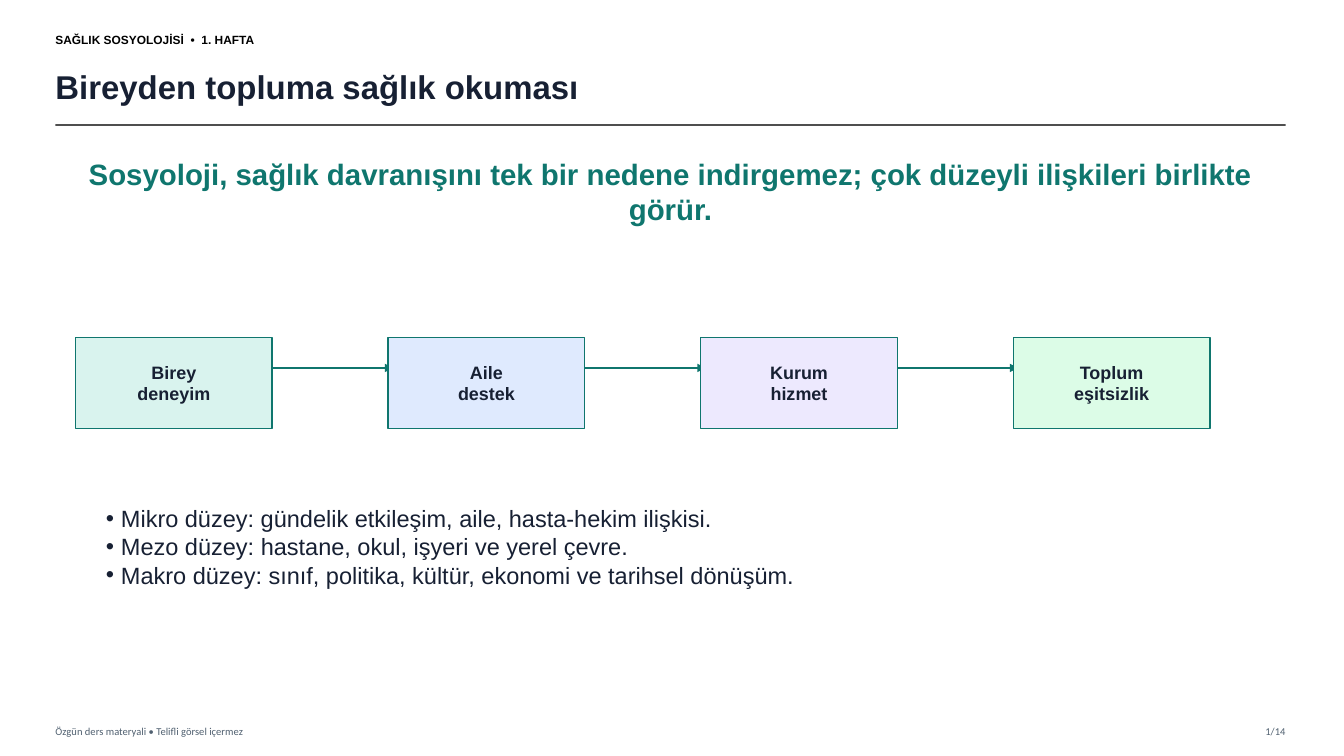
from dataclasses import dataclass
from typing import NamedTuple

from lxml import etree
from pptx import Presentation
from pptx.dml.color import RGBColor
from pptx.enum.shapes import MSO_CONNECTOR, MSO_SHAPE
from pptx.enum.text import MSO_ANCHOR, PP_ALIGN
from pptx.oxml.ns import qn
from pptx.util import Inches, Pt

LEFT, CENTER, RIGHT = PP_ALIGN.LEFT, PP_ALIGN.CENTER, PP_ALIGN.RIGHT
TOP, MIDDLE = MSO_ANCHOR.TOP, MSO_ANCHOR.MIDDLE
STRAIGHT, RECTANGLE = MSO_CONNECTOR.STRAIGHT, MSO_SHAPE.RECTANGLE


@dataclass(frozen=True)
class Theme:
    ink: str = "172033"
    accent: str = "0F766E"
    black: str = "000000"
    muted: str = "506070"
    rule: str = "333333"
    heading_font: str = "Arial"
    footer_font: str = "Calibri"
    kicker_size: float = 8.5
    title_size: float = 23.5
    message_size: float = 21
    stage_size: float = 12.8
    bullet_size: float = 16.8
    footer_size: float = 7.5


THEME = Theme()


class Style(NamedTuple):
    size: float
    color: str
    bold: bool = True
    font: str = THEME.heading_font
    align: PP_ALIGN = LEFT
    anchor: MSO_ANCHOR = MIDDLE


class Box(NamedTuple):
    left: float
    top: float
    width: float
    height: float


class Label(NamedTuple):
    box: Box
    lines: list[str]
    style: Style


class Stage(NamedTuple):
    lines: list[str]
    fill: str


KICKER = Style(THEME.kicker_size, THEME.black)
TITLE = Style(THEME.title_size, THEME.ink)
FOOTER = Style(THEME.footer_size, THEME.muted, False, THEME.footer_font)
MESSAGE = Style(THEME.message_size, THEME.accent, align=CENTER, anchor=TOP)
STAGE = Style(THEME.stage_size, THEME.ink, align=CENTER)
BULLETS = Style(THEME.bullet_size, THEME.ink, False, anchor=TOP)

LABELS = [
    Label(Box(0.55, 0.58, 11.95, 0.55), ["Bireyden topluma sağlık okuması"], TITLE),
    Label(Box(0.55, 7.14, 6, 0.22),
          ["Özgün ders materyali • Telifli görsel içermez"], FOOTER),
    Label(Box(12.1, 7.14, 0.65, 0.22), ["1/14"], FOOTER._replace(align=RIGHT)),
    Label(Box(0.8, 1.55, 11.7, 1.05),
          ["Sosyoloji, sağlık davranışını tek bir nedene indirgemez; "
           "çok düzeyli ilişkileri birlikte görür."], MESSAGE),
]
KICKER_PARTS = ["SAĞLIK SOSYOLOJİSİ", " ", "•", " ", "1. HAFTA"]
KICKER_SPACING = 236
STAGES = [
    Stage(["Birey", "deneyim"], "D9F3EE"),
    Stage(["Aile", "destek"], "DFEAFE"),
    Stage(["Kurum", "hizmet"], "EDE9FE"),
    Stage(["Toplum", "eşitsizlik"], "DCFCE7"),
]
FIRST_STAGE = Box(0.75, 3.35, 1.95, 0.9)
STAGE_PITCH = 3.1
ARROW_OFFSET, ARROW_LENGTH, ARROW_TOP = 1.8, 1.35, 3.65
LEVELS = [
    "Mikro düzey: gündelik etkileşim, aile, hasta-hekim ilişkisi.",
    "Mezo düzey: hastane, okul, işyeri ve yerel çevre.",
    "Makro düzey: sınıf, politika, kültür, ekonomi ve tarihsel dönüşüm.",
]
BULLET_INDENT = Inches(0.15)


def rgb(color: str) -> RGBColor:
    return RGBColor.from_string(color)


def style_run(r, style: Style) -> None:
    r.font.name = style.font
    r.font.size = Pt(style.size)
    r.font.bold = style.bold
    r.font.color.rgb = rgb(style.color)


def fill_text(sp, lines: list[str], style: Style) -> None:
    tf = sp.text_frame
    tf.text = "\n".join(lines)
    tf.word_wrap = True
    tf.vertical_anchor = style.anchor
    tf.margin_left = tf.margin_right = tf.margin_top = tf.margin_bottom = 0
    for p in tf.paragraphs:
        p.alignment = style.align
        for r in p.runs:
            style_run(r, style)


def add_label(s, label: Label):
    sp = s.shapes.add_textbox(*map(Inches, label.box))
    fill_text(sp, label.lines, label.style)
    return sp


def add_kicker(s) -> None:
    sp = add_label(s, Label(Box(0.55, 0.25, 3.6, 0.28), [""], KICKER))
    p = sp.text_frame.paragraphs[0]
    for part in KICKER_PARTS:
        r = p.add_run()
        r.text = part
        style_run(r, KICKER)
        if part == " ":
            r.font._element.set("spc", str(KICKER_SPACING))


def add_line(s, left: float, right: float, top: float, color: str, width: float):
    cxn = s.shapes.add_connector(
        STRAIGHT, Inches(left), Inches(top), Inches(right), Inches(top))
    cxn.line.color.rgb = rgb(color)
    cxn.line.width = Pt(width)
    etree.SubElement(cxn._element.spPr, qn("a:effectLst"))
    return cxn


def add_rule(s) -> None:
    cxn = add_line(s, 0.55, 12.75, 1.24, THEME.rule, 1.2)
    color = cxn.line._ln.find(".//" + qn("a:srgbClr"))
    etree.SubElement(color, qn("a:alpha"), val="85000")


def add_arrow(s, left: float) -> None:
    cxn = add_line(s, left, left + ARROW_LENGTH, ARROW_TOP, THEME.accent, 2)
    etree.SubElement(cxn.line._ln, qn("a:tailEnd"), type="triangle")


def add_stage(s, box: Box, stage: Stage) -> None:
    sp = s.shapes.add_shape(RECTANGLE, *map(Inches, box))
    sp.shadow.inherit = False
    sp.fill.solid()
    sp.fill.fore_color.rgb = rgb(stage.fill)
    sp.line.color.rgb = rgb(THEME.accent)
    sp.line.width = Pt(1)
    fill_text(sp, stage.lines, STAGE)


def add_flow(s) -> None:
    lefts = [FIRST_STAGE.left + i * STAGE_PITCH for i in range(len(STAGES))]
    for left in lefts[:-1]:
        add_arrow(s, left + ARROW_OFFSET)
    for left, stage in zip(lefts, STAGES):
        add_stage(s, FIRST_STAGE._replace(left=left), stage)


def add_levels(s) -> None:
    sp = add_label(s, Label(Box(1.05, 5, 11, 1.25), LEVELS, BULLETS))
    for p in sp.text_frame.paragraphs:
        pPr = p._p.get_or_add_pPr()
        pPr.set("marL", str(BULLET_INDENT))
        pPr.set("indent", str(-BULLET_INDENT))
        etree.SubElement(pPr, qn("a:buFont"), typeface=THEME.heading_font)
        etree.SubElement(pPr, qn("a:buChar"), char="•")


def main() -> None:
    prs = Presentation()
    prs.slide_width, prs.slide_height = Inches(13.33), Inches(7.5)
    s = prs.slides.add_slide(prs.slide_layouts[6])
    add_kicker(s)
    add_rule(s)
    for label in LABELS:
        add_label(s, label)
    add_flow(s)
    add_levels(s)
    prs.save("out.pptx")


if __name__ == "__main__":
    main()
